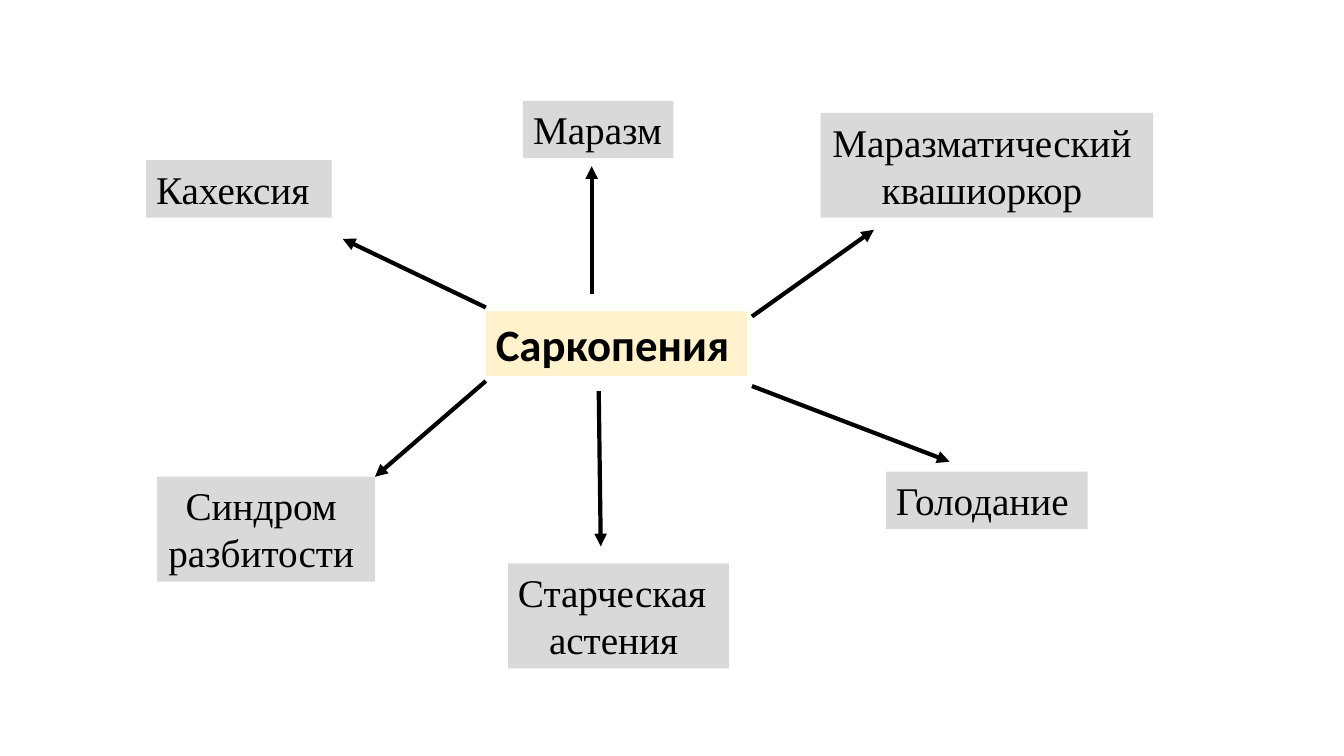
from lxml import etree
from pptx import Presentation
from pptx import util as u
from pptx.dml.color import RGBColor
from pptx.enum import shapes, text
from pptx.oxml.ns import qn

BLACK = RGBColor(0x00, 0x00, 0x00)
GREY = RGBColor(0xD9, 0xD9, 0xD9)
CREAM = RGBColor(0xFF, 0xF2, 0xCC)
LEFT, CENTER = text.PP_ALIGN.LEFT, text.PP_ALIGN.CENTER

# Lengths are columns and rows of a grid of 0.1 inch cells.
CELL = u.Inches(0.1)
COLUMNS, ROWS = 133.33, 75
LINE_ROWS, PADDING_ROWS = 4.7, 1

CENTRAL_TERM = ("Саркопения", (48.2, 30.9, 25.9, 6.4))

# Lines with alignment, (left, top, width), arrow start, arrow end
RELATED_TERMS = [
    ([("Маразм", LEFT)], (51.9, 10, 14.9), (58.7, 29.2), (58.7, 16.5)),
    ([("Маразматический ", CENTER), ("квашиоркор ", CENTER)],
     (81.4, 11.2, 33), (74.6, 31.4), (86.7, 22.8)),
    ([("Кахексия", LEFT)], (14.5, 15.9, 18.4), (48.2, 30.5), (34, 23.7)),
    ([("Синдром ", CENTER), ("разбитости ", CENTER)],
     (15.6, 47.3, 21.6), (48.2, 37.8), (37.2, 47.3)),
    ([("Старческая", LEFT), ("астения ", CENTER)],
     (50.4, 55.9, 21.9), (59.4, 38.8), (59.6, 54.2)),
    ([("Голодание", LEFT)], (87.9, 46.8, 20), (74.6, 38.3), (94.2, 45.8)),
]


def grid(*cells):
    return [round(cell * CELL) for cell in cells]


def add_term(slide, lines, box, fill, font="Times New Roman", size=28, bold=False):
    shape = slide.shapes.add_shape(shapes.MSO_SHAPE.RECTANGLE, *grid(*box))
    shape.shadow.inherit = False
    shape.fill.solid()
    shape.fill.fore_color.rgb = fill
    shape.line.fill.background()
    frame = shape.text_frame
    frame.word_wrap = True
    frame.vertical_anchor = text.MSO_ANCHOR.TOP
    for index, (words, alignment) in enumerate(lines):
        paragraph = frame.add_paragraph() if index else frame.paragraphs[0]
        paragraph.alignment = alignment
        run = paragraph.add_run()
        run.text = words
        run.font.name = font
        run.font.size = u.Pt(size)
        run.font.bold = bold
        run.font.color.rgb = BLACK


def add_arrow(slide, start, end):
    arrow = slide.shapes.add_connector(
        shapes.MSO_CONNECTOR.STRAIGHT, *grid(*start, *end))
    arrow.line.color.rgb = BLACK
    arrow.line.width = u.Pt(3)
    etree.SubElement(arrow.line._get_or_add_ln(), qn("a:tailEnd"), type="triangle")
    etree.SubElement(arrow._element.spPr, qn("a:effectLst"))


def main():
    presentation = Presentation()
    presentation.slide_width, presentation.slide_height = grid(COLUMNS, ROWS)
    slide = presentation.slides.add_slide(presentation.slide_layouts[6])

    term, box = CENTRAL_TERM
    add_term(slide, [(term, LEFT)], box, CREAM, font="Calibri", size=32, bold=True)
    for lines, place, start, end in RELATED_TERMS:
        height = len(lines) * LINE_ROWS + PADDING_ROWS
        add_term(slide, lines, (*place, height), GREY)
        add_arrow(slide, start, end)

    presentation.save("out.pptx")


if __name__ == "__main__":
    main()
